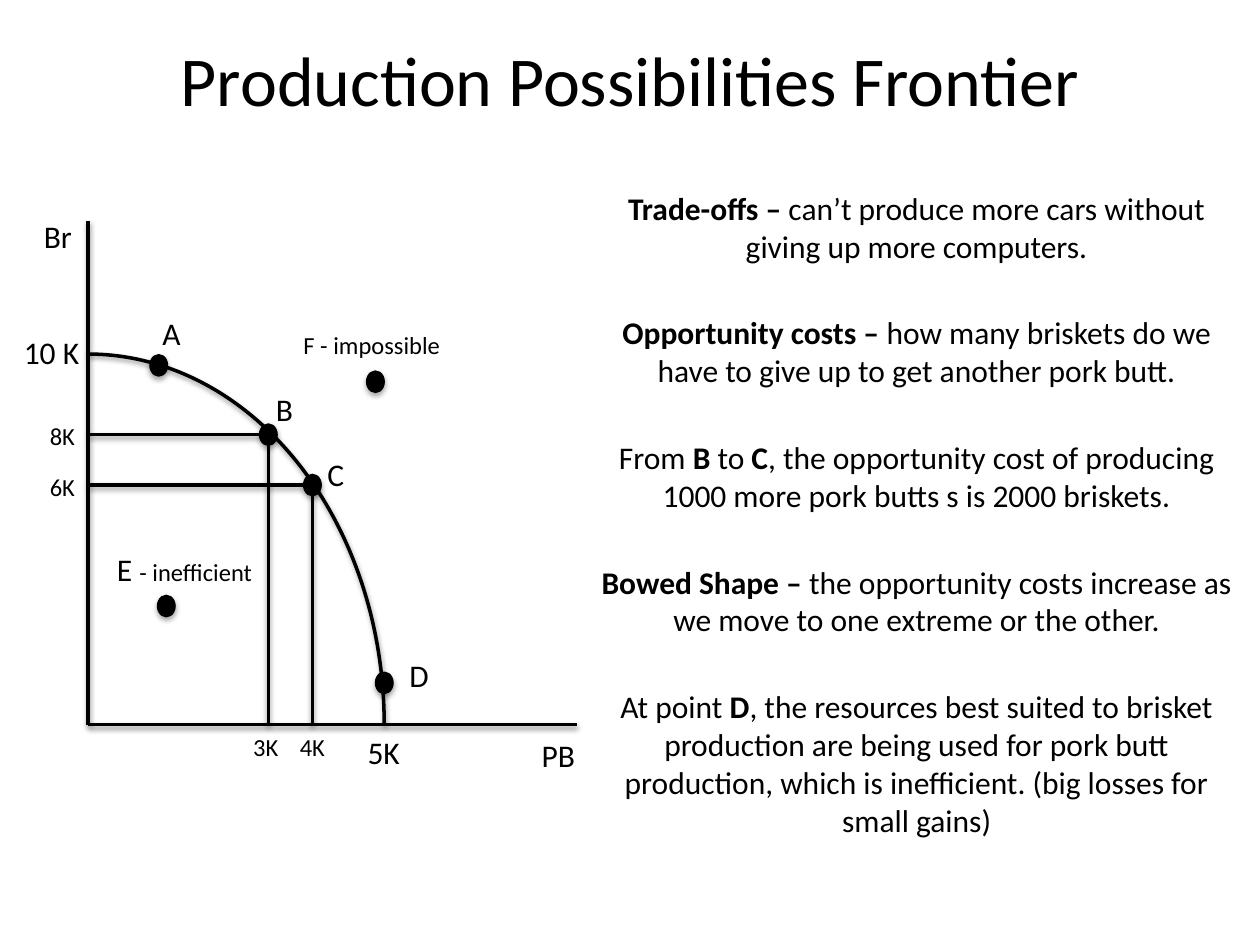
from dataclasses import dataclass

from lxml.etree import SubElement
from pptx import Presentation
from pptx.dml.color import RGBColor
from pptx.enum.shapes import MSO_CONNECTOR, MSO_SHAPE
from pptx.enum.text import MSO_ANCHOR, PP_ALIGN
from pptx.oxml.ns import qn
from pptx.util import Inches, Pt


@dataclass(frozen=True)
class Theme:
    font: str = "Calibri"
    ink: RGBColor = RGBColor(0, 0, 0)
    title: Pt = Pt(40)
    body: Pt = Pt(18)
    small: Pt = Pt(14)
    gap: Pt = Pt(28)
    line: Pt = Pt(2)
    outline: Pt = Pt(0.75)


THEME = Theme()

NOTES = [
    [("Trade-offs – ", True),
     ("can’t produce more cars without giving up more computers.", False)],
    [("Opportunity costs –", True),
     (" how many briskets do we have to give up to get another pork butt.", False)],
    [("From ", False), ("B", True), (" to ", False), ("C", True),
     (", the opportunity cost of producing 1000 more pork butts s is 2000 briskets.", False)],
    [("Bowed Shape –", True),
     (" the opportunity costs increase as we move to one extreme or the other.", False)],
    [("At point ", False), ("D", True),
     (", the resources best suited to brisket production are being used for pork butt "
      "production, which is inefficient. (big losses for small gains)", False)],
]

POINTS = {"A": (0.56, 1.15), "B": (1.43, 1.7), "C": (1.78, 2.1),
          "D": (2.35, 3.67), "E": (0.62, 3.06), "F": (2.28, 1.28)}
DOT_WIDTH, DOT_HEIGHT = 0.14, 0.17
CURVE_WIDTH, CURVE_HEIGHT = 2.35, 2.94

LEFT, CENTER = PP_ALIGN.LEFT, PP_ALIGN.CENTER
BODY_LABELS = [
    ("A", 0.49, 0.69, 0.32, LEFT), ("B", 1.39, 1.3, 0.32, LEFT),
    ("C", 1.8, 1.81, 0.32, LEFT), ("D", 2.45, 3.41, 0.32, LEFT),
    ("10 K", -0.61, 0.84, 0.81, LEFT), ("5K", 1.94, 4.02, 0.81, CENTER),
    ("Br", -0.45, -0.08, 0.43, LEFT), ("PB", 3.5, 4.04, 0.47, LEFT),
]
SMALL_LABELS = [
    ("F - impossible", 1.61, 0.82, 1.49, LEFT),
    ("8K", -0.61, 1.54, 0.81, CENTER), ("6K", -0.61, 1.95, 0.81, CENTER),
    ("3K", 1.16, 4.01, 0.5, CENTER), ("4K", 1.53, 4.01, 0.5, CENTER),
]


def add_shadow(shape, opacity):
    properties = shape._element.spPr
    effects = properties.find(qn("a:effectLst"))
    if effects is None:
        effects = SubElement(properties, qn("a:effectLst"))
    shadow = SubElement(effects, qn("a:outerShdw"), blurRad=str(Pt(3.1)),
                        dist=str(Pt(1.7)), dir="5400000", rotWithShape="0")
    color = SubElement(shadow, qn("a:srgbClr"), val=str(THEME.ink))
    SubElement(color, qn("a:alpha"), val=str(opacity * 1000))


def style_paragraph(paragraph, size, alignment):
    paragraph.alignment = alignment
    paragraph.font.name = THEME.font
    paragraph.font.size = size
    paragraph.font.color.rgb = THEME.ink


def add_text(slide, box, text, size, alignment=LEFT, wrap=True):
    shape = slide.shapes.add_textbox(*map(Inches, box))
    shape.text_frame.word_wrap = wrap
    paragraph = shape.text_frame.paragraphs[0]
    paragraph.text = text
    style_paragraph(paragraph, size, alignment)
    return shape


def add_title(slide, box):
    shape = add_text(slide, box, "Production Possibilities Frontier", THEME.title, CENTER)
    shape.text_frame.vertical_anchor = MSO_ANCHOR.MIDDLE


def add_notes(slide, box):
    frame = slide.shapes.add_textbox(*map(Inches, box)).text_frame
    frame.word_wrap = True
    for index, note in enumerate(NOTES):
        paragraph = frame.add_paragraph() if index else frame.paragraphs[0]
        style_paragraph(paragraph, THEME.body, CENTER)
        if index:
            paragraph.space_before = THEME.gap
        for text, bold in note:
            run = paragraph.add_run()
            run.text = text
            run.font.bold = bold


def add_graph(slide, box):
    left, top, width, height = box

    def add_line(start, end):
        line = slide.shapes.add_connector(
            MSO_CONNECTOR.STRAIGHT, Inches(left + start[0]), Inches(top + start[1]),
            Inches(left + end[0]), Inches(top + end[1]))
        line.line.color.rgb = THEME.ink
        line.line.width = THEME.line
        add_shadow(line, 38)

    def add_centered_shape(kind, x, y, shape_width, shape_height, line_width, opacity):
        shape = slide.shapes.add_shape(
            kind, Inches(left + x - shape_width / 2), Inches(top + y - shape_height / 2),
            Inches(shape_width), Inches(shape_height))
        shape.line.color.rgb = THEME.ink
        shape.line.width = line_width
        shape.shadow.inherit = False
        add_shadow(shape, opacity)
        return shape

    add_line((0, 0), (0, height))
    add_line((0, height), (width, height))
    curve = add_centered_shape(MSO_SHAPE.ARC, 0, height, 2 * CURVE_WIDTH,
                               2 * CURVE_HEIGHT, THEME.line, 38)
    curve.fill.background()

    for name in "BC":
        x, y = POINTS[name]
        add_line((x, y), (0, y))
        add_line((x, y), (x, height))

    for x, y in POINTS.values():
        dot = add_centered_shape(MSO_SHAPE.OVAL, x, y, DOT_WIDTH, DOT_HEIGHT,
                                 THEME.outline, 35)
        dot.fill.solid()
        dot.fill.fore_color.rgb = THEME.ink

    for labels, size, label_height in ((BODY_LABELS, THEME.body, 0.4),
                                       (SMALL_LABELS, THEME.small, 0.34)):
        for text, x, y, label_width, alignment in labels:
            add_text(slide, (left + x, top + y, label_width, label_height), text, size,
                     alignment, wrap=text not in ("Br", "PB"))

    inefficient = add_text(slide, (left + 0.13, top + 2.57, 1.43, 0.4), "E ", THEME.body)
    run = inefficient.text_frame.paragraphs[0].add_run()
    run.text = "- inefficient"
    run.font.size = THEME.small


def main():
    presentation = Presentation()
    presentation.slide_width = Inches(10)
    presentation.slide_height = Inches(7.5)
    slide = presentation.slides.add_slide(presentation.slide_layouts[6])
    add_title(slide, (0.5, 0, 9, 1.25))
    add_notes(slide, (4.67, 1.45, 5.21, 5.56))
    add_graph(slide, (0.7, 1.75, 3.88, 4))
    presentation.save("out.pptx")


if __name__ == "__main__":
    main()
